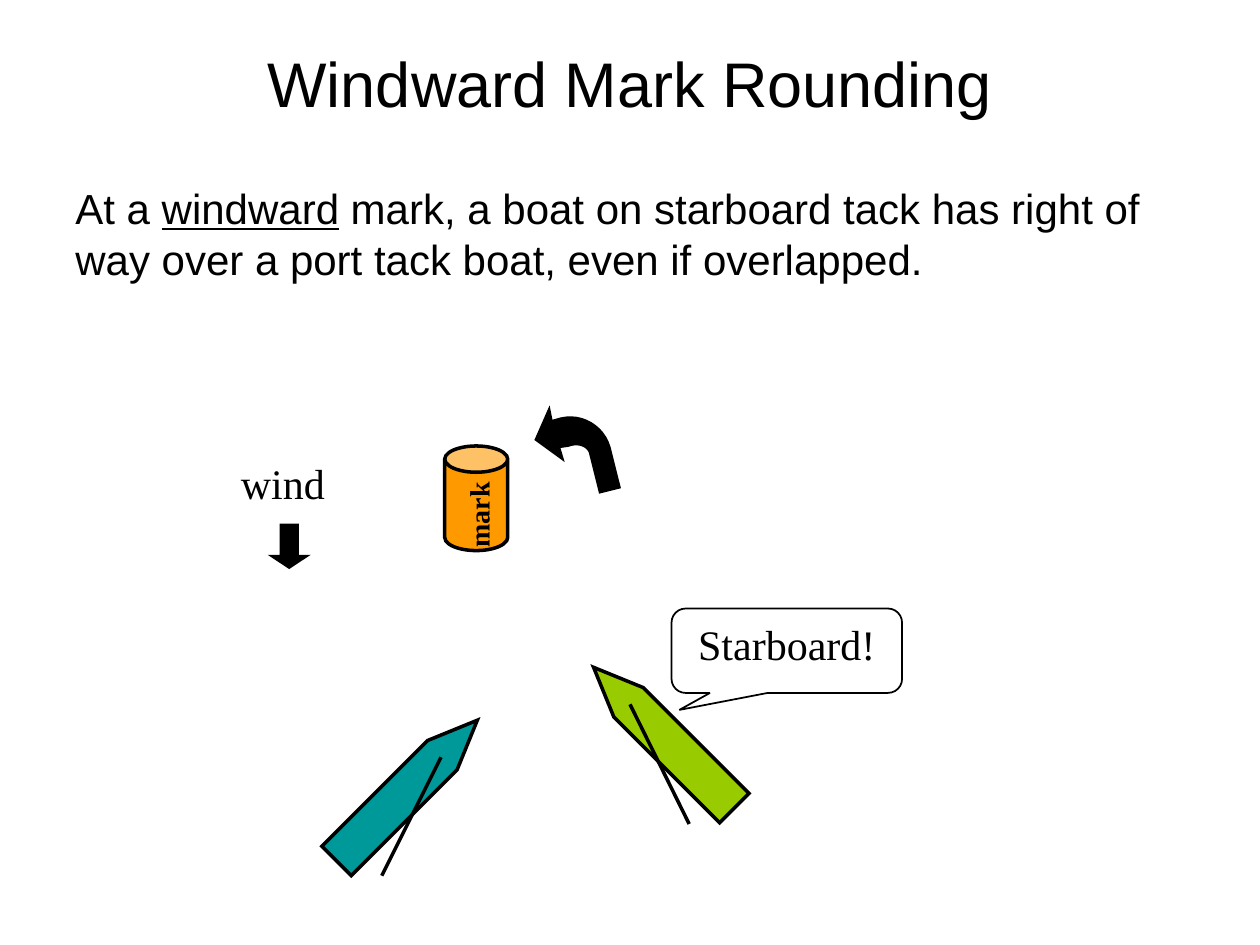
"""Build the windward mark rounding slide."""
from lxml import etree
from pptx import Presentation
from pptx.dml.color import RGBColor
from pptx.enum.shapes import MSO_CONNECTOR, MSO_SHAPE
from pptx.enum.text import MSO_ANCHOR, PP_ALIGN
from pptx.oxml.ns import qn
from pptx.util import Inches, Pt

BLACK = RGBColor(0x00, 0x00, 0x00)
TEAL = RGBColor(0x00, 0x99, 0x99)
LIME = RGBColor(0x99, 0xCC, 0x00)
ORANGE = RGBColor(0xFF, 0x99, 0x00)
CENTER, LEFT = PP_ALIGN.CENTER, PP_ALIGN.LEFT
TOP = MSO_ANCHOR.TOP
STRAIGHT = MSO_CONNECTOR.STRAIGHT
HULL, CAN = MSO_SHAPE.PENTAGON, MSO_SHAPE.CAN
DOWN_ARROW = MSO_SHAPE.DOWN_ARROW
CALLOUT = MSO_SHAPE.ROUNDED_RECTANGULAR_CALLOUT
SANS, SERIF = "Arial", "Times New Roman"

TITLE = ["Windward Mark Rounding"]
RULE = ["At a ", "windward",
        " mark, a boat on starboard tack has right of way over a port tack boat, even if overlapped."]
UNDERLINED = "windward"
BOATS = [
    {"hull": (2.44, 6.11, 1.58, 0.33), "heading": 315, "color": TEAL,
     "sail": (3.5, 6.01, 3.03, 6.95)},
    {"hull": (4.48, 5.69, 1.58, 0.33), "heading": 225, "color": LIME,
     "sail": (5, 5.59, 5.47, 6.54)},
]
TURN = [
    [(4.25, 3.49)], [(4.36, 3.24)], [(4.38, 3.34)], [(4.45, 3.32)],
    [(4.62, 3.28), (4.79, 3.38), (4.84, 3.55)],
    [(4.92, 3.87)], [(4.76, 3.91)], [(4.68, 3.59)],
    [(4.66, 3.54), (4.59, 3.51), (4.51, 3.54)],
    [(4.44, 3.55)], [(4.47, 3.65)],
]
CURVE_STEPS = 12


def inches(values):
    return [Inches(value) for value in values]


def write(holder, runs, size, font, align=CENTER, before=0, bold=False):
    frame = holder.text_frame
    frame.word_wrap = True
    frame.vertical_anchor = TOP
    paragraph = frame.paragraphs[0]
    paragraph.alignment = align
    paragraph.space_before = Pt(before)
    for words in runs:
        run = paragraph.add_run()
        run.text = words
        run.font.size = Pt(size)
        run.font.name = font
        run.font.bold = bold
        run.font.color.rgb = BLACK
        run.font.underline = words == UNDERLINED


def add_text(shapes, box, runs, size, font, **style):
    holder = shapes.add_textbox(*inches(box))
    write(holder, runs, size, font, **style)
    return holder


def paint(shape, fill, width):
    shape.shadow.inherit = False
    if fill is None:
        shape.fill.background()
    else:
        shape.fill.solid()
        shape.fill.fore_color.rgb = fill
    shape.line.color.rgb = BLACK
    shape.line.width = Pt(width)
    line = shape._element.spPr.find(qn("a:ln"))
    etree.SubElement(line, qn("a:miter"), lim="800000")


def add_preset(shapes, kind, box, fill, adjustments, width=2):
    shape = shapes.add_shape(kind, *inches(box))
    for index, value in enumerate(adjustments):
        shape.adjustments[index] = value
    paint(shape, fill, width)
    return shape


def add_boat(shapes, boat):
    parts = shapes.add_group_shape().shapes
    hull = add_preset(parts, HULL, boat["hull"], boat["color"], [1.188])
    hull.rotation = boat["heading"]
    sail = parts.add_connector(STRAIGHT, *inches(boat["sail"]))
    sail.line.color.rgb = BLACK
    sail.line.width = Pt(2)
    etree.SubElement(sail._element.spPr, qn("a:effectLst"))


def bezier(start, first, second, end, t):
    weights = ((1 - t) ** 3, 3 * t * (1 - t) ** 2, 3 * t ** 2 * (1 - t), t ** 3)
    return tuple(sum(w * p[axis] for w, p in zip(weights, (start, first, second, end)))
                 for axis in (0, 1))


def outline(segments):
    points = []
    for segment in segments:
        if len(segment) == 1:
            points += segment
        else:
            start = points[-1]
            points += [bezier(start, *segment, step / CURVE_STEPS)
                       for step in range(1, CURVE_STEPS + 1)]
    return points


def add_turn(shapes):
    start, *rest = [inches(point) for point in outline(TURN)]
    builder = shapes.build_freeform(*start)
    builder.add_line_segments(rest, close=True)
    paint(builder.convert_to_shape(), BLACK, 1)


def main():
    deck = Presentation()
    deck.slide_width, deck.slide_height = Inches(10), Inches(7.5)
    shapes = deck.slides.add_slide(deck.slide_layouts[6]).shapes

    add_text(shapes, (0.5, 0.3, 9, 1.25), TITLE, 36, SANS)
    add_text(shapes, (0.5, 1.4, 9, 1.45), RULE, 24, SANS, align=LEFT, before=4.8)

    port_boat, starboard_boat = BOATS
    add_boat(shapes, port_boat)
    add_preset(shapes, DOWN_ARROW, (2.17, 4.17, 0.25, 0.33), BLACK, [0.5, 0.33])
    add_text(shapes, (1.58, 3.58, 1.33, 0.5), ["wind"], 24, SERIF, before=12)
    add_boat(shapes, starboard_boat)

    hail = add_preset(shapes, CALLOUT, (5.33, 4.83, 1.83, 0.67), None,
                      [-0.466, 0.701, 0.167], width=1)
    write(hail, ["Starboard!"], 24, SERIF)

    add_turn(shapes)
    mark = shapes.add_group_shape().shapes
    add_preset(mark, CAN, (3.53, 3.54, 0.5, 0.83), ORANGE, [0.417])
    label = add_text(mark, (3.34, 3.9, 0.92, 0.37), ["mark"], 16, SERIF, before=8, bold=True)
    label.rotation = 270

    deck.save("out.pptx")


if __name__ == "__main__":
    main()
